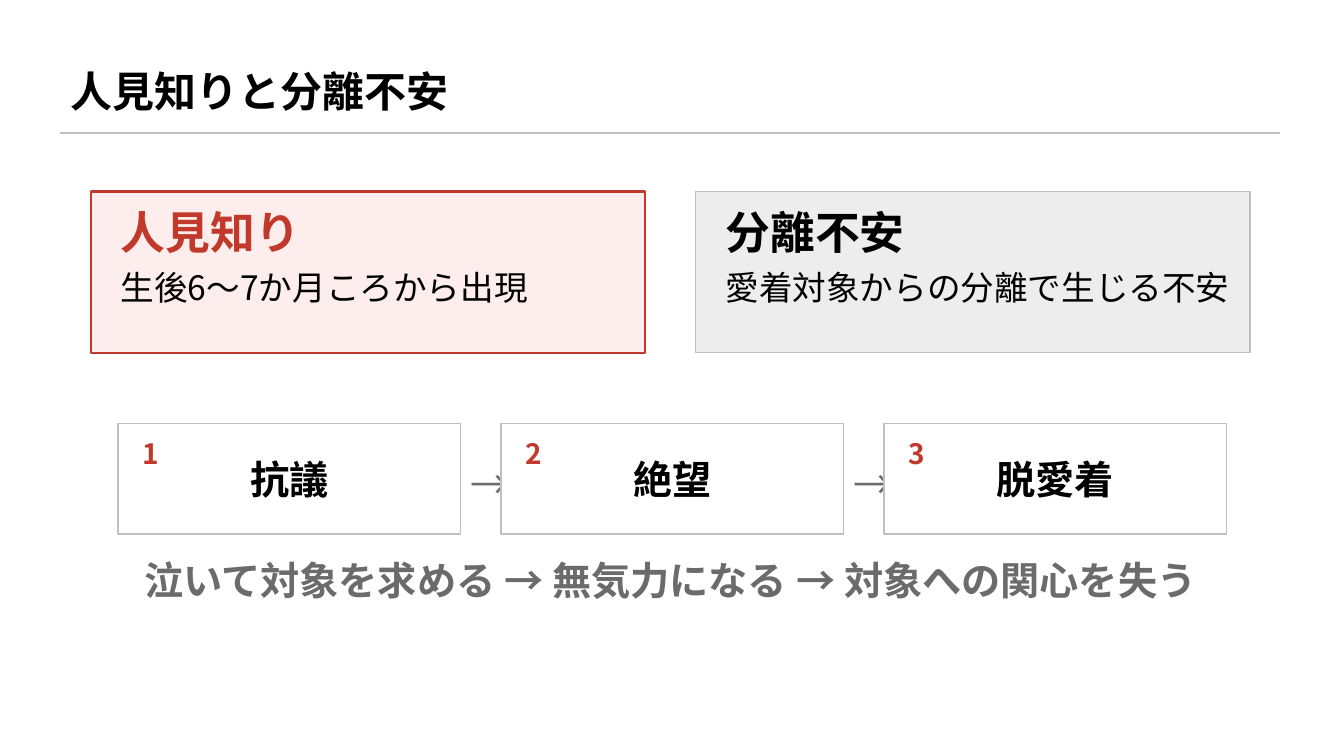
from lxml import etree
from pptx import Presentation
from pptx.dml.color import RGBColor
from pptx.enum.shapes import MSO_CONNECTOR, MSO_SHAPE
from pptx.enum.text import MSO_ANCHOR, PP_ALIGN
from pptx.oxml.ns import qn
from pptx.util import Pt

BLACK = RGBColor(0, 0, 0)
WHITE = RGBColor(0xFF, 0xFF, 0xFF)
RED = RGBColor(0xC0, 0x39, 0x2B)
PINK = RGBColor(0xFD, 0xED, 0xEC)
PALE = RGBColor(0xED, 0xED, 0xED)
RULE = RGBColor(0xBF, 0xBF, 0xBF)
GREY = RGBColor(0x6B, 0x6B, 0x6B)
FONT = "Noto Sans CJK JP"
RECT = MSO_SHAPE.RECTANGLE
STRAIGHT = MSO_CONNECTOR.STRAIGHT
TOP, MIDDLE = MSO_ANCHOR.TOP, MSO_ANCHOR.MIDDLE
LEFT, CENTER = PP_ALIGN.LEFT, PP_ALIGN.CENTER


def add_text(slide, box, text, size, color=BLACK, bold=True, align=LEFT, anchor=MIDDLE):
    """Place one line of text in a box given in points."""
    frame = slide.shapes.add_textbox(*map(Pt, box)).text_frame
    frame.word_wrap = True
    frame.vertical_anchor = anchor
    par = frame.paragraphs[0]
    par.alignment = align
    run = par.add_run()
    run.text = text
    font = run.font
    font.name, font.size, font.bold = FONT, Pt(size), bold
    font.color.rgb = color
    etree.SubElement(run._r.get_or_add_rPr(), qn("a:ea"), typeface=FONT)


def add_rect(slide, box, fill, line, weight=1):
    """Draw a filled, outlined rectangle without a shadow."""
    rect = slide.shapes.add_shape(RECT, *map(Pt, box))
    rect.shadow.inherit = False
    rect.fill.solid()
    rect.fill.fore_color.rgb = fill
    rect.line.color.rgb = line
    rect.line.width = Pt(weight)


def add_header(slide, box, title):
    """Draw the slide title with a thin rule under it."""
    x, y, w, h = box
    add_text(slide, box, title, 30)
    base = y + h - 2.16
    rule = slide.shapes.add_connector(STRAIGHT, Pt(x), Pt(base), Pt(x + 871.2), Pt(base))
    rule.line.color.rgb = RULE
    rule.line.width = Pt(1)
    etree.SubElement(rule._element.spPr, qn("a:effectLst"))


def add_card(slide, box, head, body, fill, line, weight, color):
    """Draw a card with a bold heading and a line of detail."""
    x, y, w, h = box
    add_rect(slide, box, fill, line, weight)
    add_text(slide, (x + 14.4, y + 10.8, w - 28.8, 36), head, 32, color)
    add_text(slide, (x + 14.4, y + 50.4, w - 14.4, 57.6), body, 24, bold=False, anchor=TOP)


def add_steps(slide, box, names, gap):
    """Draw numbered steps in a row with an arrow in each gap."""
    x, y, w, h = box
    width = (w - gap * (len(names) - 1)) / len(names)
    for i, name in enumerate(names):
        left = x + i * (width + gap)
        if i:
            add_text(slide, (left - gap, y + 21.6, gap, 43.2), "→", 28, GREY, False, CENTER)
        cell = (left, y, width, h)
        add_rect(slide, cell, WHITE, RULE)
        add_text(slide, (left + 10.44, y + 7.2, 36, 28.8), str(i + 1), 20, RED)
        add_text(slide, cell, name, 28, align=CENTER)


def main():
    """Build the slide and save it."""
    deck = Presentation()
    deck.slide_width, deck.slide_height = Pt(960), Pt(540)
    slide = deck.slides.add_slide(deck.slide_layouts[6])
    add_header(slide, (43.2, 32.4, 871.2, 64.8), "人見知りと分離不安")
    cards = [
        ("人見知り", "生後6〜7か月ころから出現", PINK, RED, 1.5, RED),
        ("分離不安", "愛着対象からの分離で生じる不安", PALE, RULE, 1, BLACK),
    ]
    for i, card in enumerate(cards):
        add_card(slide, (64.8 + i * 432, 136.8, 396, 115.2), *card)
    add_steps(slide, (84.24, 302.4, 792, 79.2), ["抗議", "絶望", "脱愛着"], 28.8)
    note = "泣いて対象を求める → 無気力になる → 対象への関心を失う"
    add_text(slide, (64.8, 396, 828, 36), note, 28, GREY, align=CENTER)
    deck.save("out.pptx")


if __name__ == "__main__":
    main()
